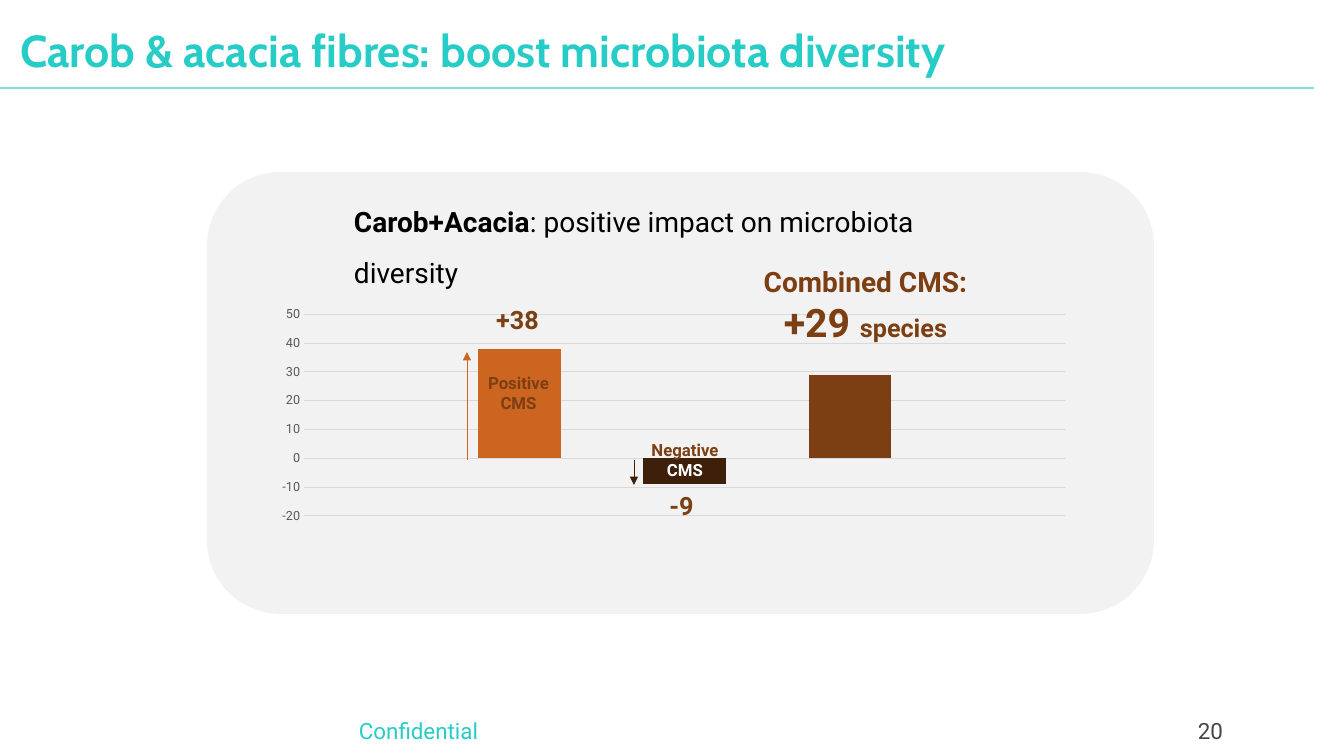
import pptx
import pptx.chart.data
import pptx.dml.color
import pptx.enum.chart
import pptx.enum.shapes
import pptx.enum.text
import pptx.oxml
import pptx.oxml.ns
import pptx.util

COLOURS = {
    "teal": "28CCC7", "light_teal": "7EE1DE", "panel": "F2F2F2",
    "black": "000000", "grey": "454545", "axis": "595959", "grid": "D9D9D9",
    "orange": "CB651F", "dark": "3E1F0A", "brown": "7C3E13", "white": "FFFFFF",
}
ALIGN = pptx.enum.text.PP_ALIGN
ANCHOR = pptx.enum.text.MSO_ANCHOR
BODY_FONT = "Roboto"
NAMESPACES = pptx.oxml.ns.nsdecls("a", "c")


def px(value):
    return pptx.util.Emu(round(value * 914400 / 100.8))


def rgb(name):
    return pptx.dml.color.RGBColor.from_string(COLOURS[name])


class SlideBuilder:
    def __init__(self, slide):
        self.shapes = slide.shapes

    def style(self, font, size, colour, bold=False, name=BODY_FONT):
        font.name, font.size, font.bold = name, pptx.util.Pt(size), bold
        font.color.rgb = rgb(colour)

    def text(self, box, lines, align=ALIGN.LEFT, anchor=ANCHOR.TOP,
             insets=(10, 5, 10, 5), font=BODY_FONT):
        """Add a text box; each line is a list of (text, size, colour, bold) runs."""
        frame = self.shapes.add_textbox(*map(px, box)).text_frame
        frame.word_wrap = True
        frame.vertical_anchor = anchor
        (frame.margin_left, frame.margin_top,
         frame.margin_right, frame.margin_bottom) = map(px, insets)
        for index, runs in enumerate(lines):
            paragraph = frame.add_paragraph() if index else frame.paragraphs[0]
            paragraph.alignment = align
            for content, size, colour, bold in runs:
                run = paragraph.add_run()
                run.text = content
                self.style(run.font, size, colour, bold, font)
        return frame

    def panel(self, box, colour):
        shape = self.shapes.add_shape(
            pptx.enum.shapes.MSO_SHAPE.ROUNDED_RECTANGLE, *map(px, box))
        shape.shadow.inherit = False
        shape.fill.solid()
        shape.fill.fore_color.rgb = rgb(colour)
        shape.line.fill.background()

    def line(self, start, end, colour, width, arrow=False):
        connector = self.shapes.add_connector(
            pptx.enum.shapes.MSO_CONNECTOR.STRAIGHT, *map(px, start + end))
        connector.line.color.rgb = rgb(colour)
        connector.line.width = pptx.util.Pt(width)
        if arrow:
            connector.line._get_or_add_ln().append(pptx.oxml.parse_xml(
                f'<a:tailEnd {NAMESPACES} type="triangle"/>'))
        connector._element.spPr.append(
            pptx.oxml.parse_xml(f"<a:effectLst {NAMESPACES}/>"))

    def column_chart(self, box, series, plot_layout):
        data = pptx.chart.data.CategoryChartData()
        data.categories = ["1"]
        for name, value, _ in series:
            data.add_series(name, [value])
        chart = self.shapes.add_chart(
            pptx.enum.chart.XL_CHART_TYPE.COLUMN_CLUSTERED,
            *map(px, box), data).chart
        chart.has_legend = chart.has_title = False
        self.style(chart.font, 10, "black")
        plot = chart.plots[0]
        plot.gap_width, plot.overlap = 421, -100
        plot.vary_by_categories = False
        for column, (_, _, colour) in zip(plot.series, series):
            column.invert_if_negative = False
            column.format.fill.solid()
            column.format.fill.fore_color.rgb = rgb(colour)
        chart.category_axis.visible = False
        axis = chart.value_axis
        axis.minimum_scale, axis.maximum_scale, axis.major_unit = -20, 50, 10
        axis.major_tick_mark = pptx.enum.chart.XL_TICK_MARK.NONE
        axis.format.line.fill.background()
        self.style(axis.tick_labels.font, 9, "axis")
        axis.major_gridlines.format.line.color.rgb = rgb("grid")
        axis.major_gridlines.format.line.width = pptx.util.Pt(0.75)
        self.place_plot(chart, plot_layout)

    def place_plot(self, chart, fractions):
        """Fix the inner plot area as (x, y, w, h) fractions of the chart."""
        area = chart._chartSpace.chart.plotArea
        for layout in area.findall(pptx.oxml.ns.qn("c:layout")):
            area.remove(layout)
        sizes = "".join(f'<c:{key} val="{value}"/>'
                        for key, value in zip("xywh", fractions))
        area.insert(0, pptx.oxml.parse_xml(
            f'<c:layout {NAMESPACES}><c:manualLayout>'
            '<c:layoutTarget val="inner"/><c:xMode val="edge"/>'
            f'<c:yMode val="edge"/>{sizes}</c:manualLayout></c:layout>'))


def main():
    presentation = pptx.Presentation()
    presentation.slide_width, presentation.slide_height = px(1344), px(756)
    builder = SlideBuilder(
        presentation.slides.add_slide(presentation.slide_layouts[6]))

    builder.line((0, 88), (1314, 88), "light_teal", 2)
    builder.text((0, 0, 1344, 82),
                 [[("Carob & acacia fibres: boost microbiota diversity",
                    32, "teal", True)]],
                 anchor=ANCHOR.BOTTOM, insets=(20, 5, 12, 5), font="Cabin")
    builder.text((354, 714, 764, 30), [[("Confidential", 16, "teal", False)]],
                 anchor=ANCHOR.BOTTOM, insets=(5, 5, 5, 0))
    builder.text((1125, 714, 108, 30), [[("20", 16, "grey", False)]],
                 ALIGN.RIGHT, ANCHOR.BOTTOM, insets=(10, 5, 10, 0))

    builder.panel((207, 172, 947, 442), "panel")
    heading = builder.text(
        (331, 178, 698, 68),
        [[("Carob+Acacia", 20, "black", True),
          (": positive impact on microbiota diversity", 20, "black", False)]],
        insets=(23, 10, 10, 5))
    heading.paragraphs[0].line_spacing = 1.5

    builder.column_chart(
        (265, 299, 832, 264),
        [("Series 1", 38, "orange"), ("Series 2", -9, "dark"),
         ("Series 3", 29, "brown")],
        (0.047, 0.058, 0.915, 0.764))

    for box, lines in [
        ((731, 260, 269, 92), [[("Combined CMS:", 20, "brown", True)],
                               [("+29 ", 28, "brown", True),
                                ("species", 18, "brown", True)]]),
        ((467, 299, 101, 40), [[("+38", 18, "brown", True)]]),
        ((648, 485, 67, 40), [[("-9", 18, "brown", True)]]),
        ((472, 368, 93, 50), [[("Positive", 12, "brown", True)],
                              [("CMS", 12, "brown", True)]]),
        ((622, 435, 126, 50), [[("Negative", 12, "brown", True)],
                               [("CMS", 12, "white", True)]]),
    ]:
        builder.text(box, lines, ALIGN.CENTER)

    builder.line((467, 460), (467, 352), "orange", 0.5, arrow=True)
    builder.line((634, 460), (634, 485), "dark", 0.5, arrow=True)
    presentation.save("out.pptx")


if __name__ == "__main__":
    main()
